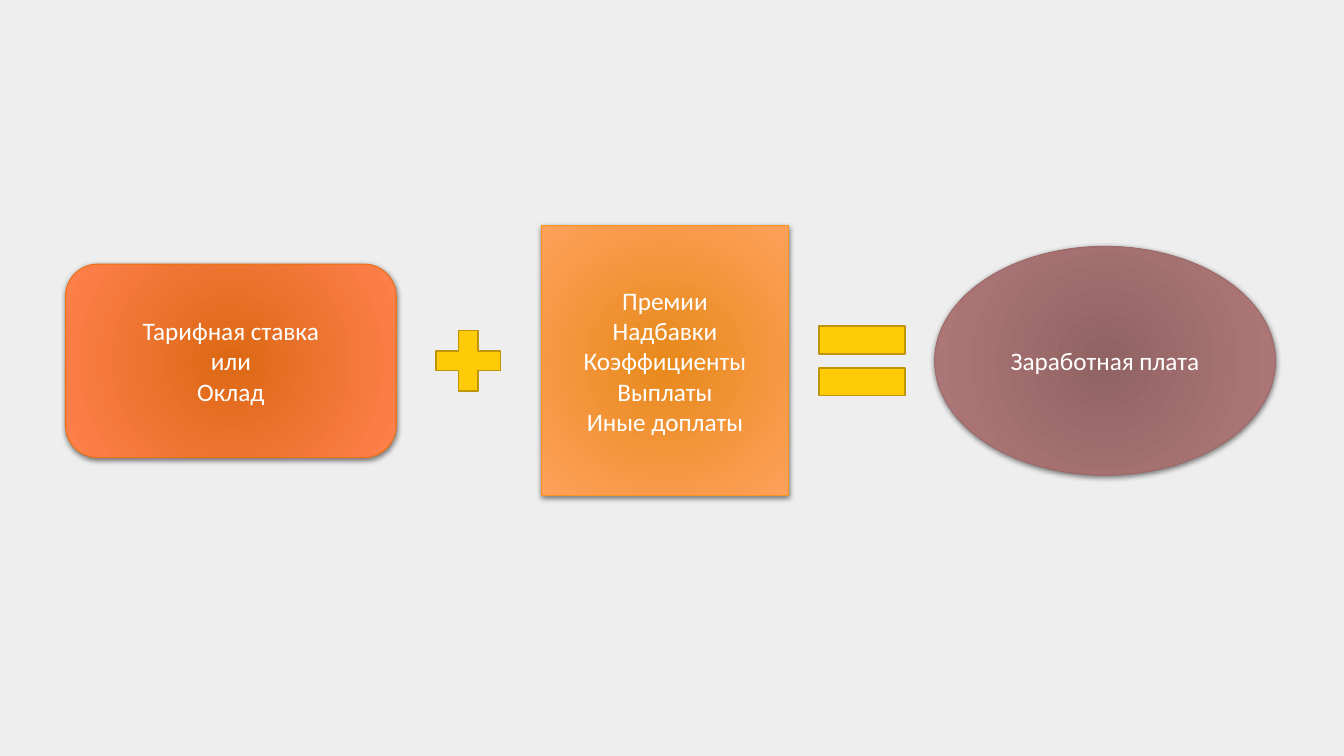
"""Builds a slide showing how a wage is made up."""
import pptx
import pptx.dml.color
import pptx.enum.shapes
import pptx.enum.text
import pptx.oxml
import pptx.oxml.ns
import pptx.util

Inches = pptx.util.Inches
Shapes = pptx.enum.shapes.MSO_SHAPE

COLORS = {
    "background": "EEEEEE",
    "text": "FFFFFF",
    "shadow": "000000",
    "sign": "FFCA08",
    "sign_line": "BD9506",
    "rate": "DC6814",
    "rate_edge": "FF814E",
    "rate_line": "EC7016",
    "extras": "E7891B",
    "extras_edge": "FFA15A",
    "extras_line": "F8931D",
    "wage": "916363",
    "wage_edge": "B37A7A",
    "wage_line": "9C6A6A",
}


def rgb(name):
    return pptx.dml.color.RGBColor.from_string(COLORS[name])


class WageSlide:
    font = "Calibri"
    size = 18
    middle = 3.58

    def __init__(self, deck):
        self.slide = deck.slides.add_slide(deck.slide_layouts[6])
        fill = self.slide.background.fill
        fill.solid()
        fill.fore_color.rgb = rgb("background")

    def shape(self, kind, left, width, height, line, line_width):
        top = self.middle - height / 2
        shape = self.slide.shapes.add_shape(
            kind, Inches(left), Inches(top), Inches(width), Inches(height))
        shape.shadow.inherit = False
        shape.line.color.rgb = rgb(line)
        shape.line.width = pptx.util.Pt(line_width)
        return shape

    def sign(self, kind, left, width, height):
        sign = self.shape(kind, left, width, height, "sign_line", 1.25)
        sign.fill.solid()
        sign.fill.fore_color.rgb = rgb("sign")

    def term(self, kind, left, width, height, color, lines):
        box = self.shape(kind, left, width, height, color + "_line", 0.75)
        self.radial_fill(box, COLORS[color], COLORS[color + "_edge"])
        self.drop_shadow(box)
        frame = box.text_frame
        frame.word_wrap = True
        frame.vertical_anchor = pptx.enum.text.MSO_ANCHOR.MIDDLE
        for index, line in enumerate(lines):
            para = frame.add_paragraph() if index else frame.paragraphs[0]
            para.alignment = pptx.enum.text.PP_ALIGN.CENTER
            span = para.add_run()
            span.text = line
            span.font.name = self.font
            span.font.size = pptx.util.Pt(self.size)
            span.font.color.rgb = rgb("text")

    def radial_fill(self, box, center, edge):
        gradient = pptx.oxml.parse_xml(
            f'<a:gradFill {pptx.oxml.ns.nsdecls("a")} rotWithShape="1"><a:gsLst>'
            f'<a:gs pos="0"><a:srgbClr val="{center}"/></a:gs>'
            f'<a:gs pos="100000"><a:srgbClr val="{edge}"/></a:gs></a:gsLst>'
            '<a:path path="circle"><a:fillToRect l="100000" t="100000" '
            'r="100000" b="100000"/></a:path></a:gradFill>')
        box.element.spPr.find(pptx.oxml.ns.qn("a:prstGeom")).addnext(gradient)

    def drop_shadow(self, box):
        shadow = pptx.oxml.parse_xml(
            f'<a:outerShdw {pptx.oxml.ns.nsdecls("a")} blurRad="50800" '
            'dist="12700" dir="5400000" algn="ctr" rotWithShape="0">'
            f'<a:srgbClr val="{COLORS["shadow"]}"><a:alpha val="50000"/>'
            '</a:srgbClr></a:outerShdw>')
        box.element.spPr.find(pptx.oxml.ns.qn("a:effectLst")).append(shadow)


def main():
    deck = pptx.Presentation()
    deck.slide_width = Inches(13.33)
    deck.slide_height = Inches(7.5)
    page = WageSlide(deck)
    page.term(Shapes.ROUNDED_RECTANGLE, 0.65, 3.28, 1.92, "rate",
              ["Тарифная ставка", "или", "Оклад"])
    page.term(Shapes.RECTANGLE, 5.37, 2.45, 2.68, "extras",
              ["Премии", "Надбавки", "Коэффициенты", "Выплаты", "Иные доплаты"])
    page.term(Shapes.OVAL, 9.27, 3.38, 2.27, "wage", ["Заработная плата"])
    page.sign(Shapes.MATH_PLUS, 4.21, 0.87, 0.82)
    page.sign(Shapes.MATH_EQUAL, 7.97, 1.16, 1.17)
    deck.save("out.pptx")


if __name__ == "__main__":
    main()
